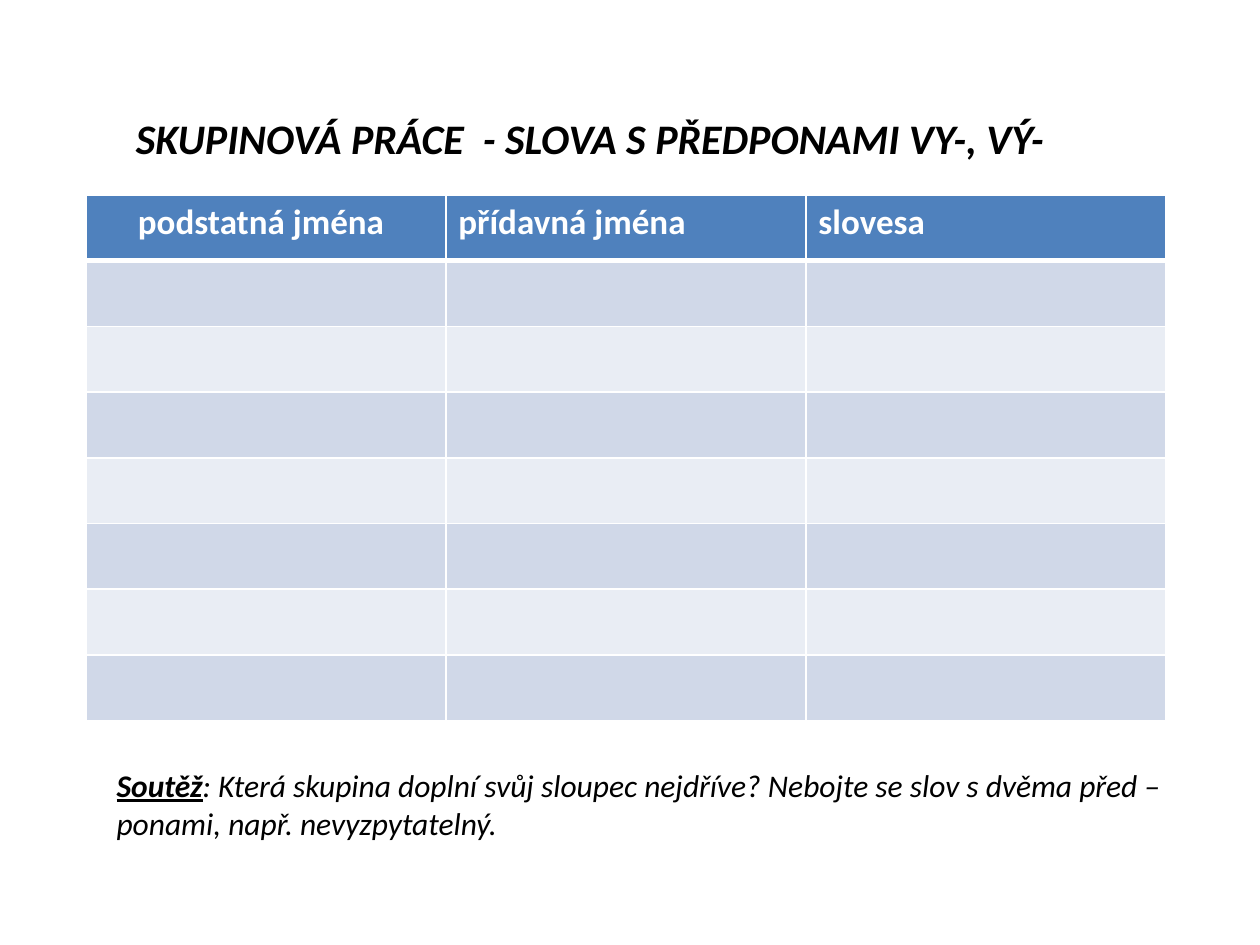
from dataclasses import dataclass

from lxml import etree
from pptx import Presentation
from pptx.dml.color import RGBColor
from pptx.enum.text import MSO_AUTO_SIZE
from pptx.oxml.ns import qn
from pptx.util import Pt

FIT_SHAPE = MSO_AUTO_SIZE.SHAPE_TO_FIT_TEXT
BLANK_LAYOUT = 6


@dataclass(frozen=True)
class Theme:
    font: str = "Calibri"
    text: str = "000000"
    header_text: str = "FFFFFF"
    header_fill: str = "4F81BD"
    bands: tuple = ("D0D8E8", "E9EDF4")
    border: str = "FFFFFF"
    title_size: int = 24
    header_size: int = 20
    note_size: int = 18
    thin_border: int = 1
    thick_border: int = 3


THEME = Theme()
HEADINGS = ("podstatná jména", "přídavná jména", "slovesa")
FIRST_HEADING_INDENT = 22.6
ROW_COUNT = 8


def style_font(font, size, color):
    font.name = THEME.font
    font.size = Pt(size)
    font.color.rgb = RGBColor.from_string(color)


def add_text(slide, left, top, width, height, lines, size):
    shape = slide.shapes.add_textbox(Pt(left), Pt(top), Pt(width), Pt(height))
    frame = shape.text_frame
    frame.word_wrap = False
    frame.auto_size = FIT_SHAPE
    frame.text = "\n".join(lines)
    for paragraph in frame.paragraphs:
        style_font(paragraph.font, size, THEME.text)
        paragraph.font.italic = True
    return frame


def add_title(slide):
    title = "SKUPINOVÁ PRÁCE  - SLOVA S PŘEDPONAMI VY-, VÝ-"
    frame = add_text(slide, 70.5, 60.5, 541, 36, [title], THEME.title_size)
    frame.paragraphs[0].font.bold = True


def add_contest_note(slide):
    label = "Soutěž"
    lines = [label, "ponami, např. nevyzpytatelný."]
    frame = add_text(slide, 59.5, 434, 613.5, 51, lines, THEME.note_size)
    opening = frame.paragraphs[0]
    label_run = opening.runs[0]
    label_run.font.bold = True
    label_run.font.underline = True
    opening.add_run().text = (
        ": Která skupina doplní svůj sloupec nejdříve? "
        "Nebojte se slov s dvěma před –"
    )


def set_borders(cell, top, bottom):
    properties = cell._tc.get_or_add_tcPr()
    widths = {"L": THEME.thin_border, "R": THEME.thin_border, "T": top, "B": bottom}
    for side, width in widths.items():
        line = etree.SubElement(properties, qn(f"a:ln{side}"), w=str(Pt(width)))
        fill = etree.SubElement(line, qn("a:solidFill"))
        etree.SubElement(fill, qn("a:srgbClr"), val=THEME.border)


def style_cell(cell, row):
    thin, thick = THEME.thin_border, THEME.thick_border
    set_borders(cell, thick if row == 1 else thin, thick if row == 0 else thin)
    color = THEME.bands[(row - 1) % 2] if row else THEME.header_fill
    cell.fill.solid()
    cell.fill.fore_color.rgb = RGBColor.from_string(color)


def add_word_table(slide):
    frame = slide.shapes.add_table(
        ROW_COUNT, len(HEADINGS), Pt(49), Pt(111.5), Pt(617.25), Pt(300.4)
    )
    table = frame.table
    for row in range(ROW_COUNT):
        for column in range(len(HEADINGS)):
            style_cell(table.cell(row, column), row)
    for column, heading in enumerate(HEADINGS):
        cell = table.cell(0, column)
        cell.text = heading
        font = cell.text_frame.paragraphs[0].font
        style_font(font, THEME.header_size, THEME.header_text)
        font.bold = True
    first_heading = table.cell(0, 0)
    first_heading.margin_left += Pt(FIRST_HEADING_INDENT)


def main():
    presentation = Presentation()
    presentation.slide_width = Pt(720)
    presentation.slide_height = Pt(540)
    slide = presentation.slides.add_slide(presentation.slide_layouts[BLANK_LAYOUT])
    add_title(slide)
    add_word_table(slide)
    add_contest_note(slide)
    presentation.save("out.pptx")


if __name__ == "__main__":
    main()
